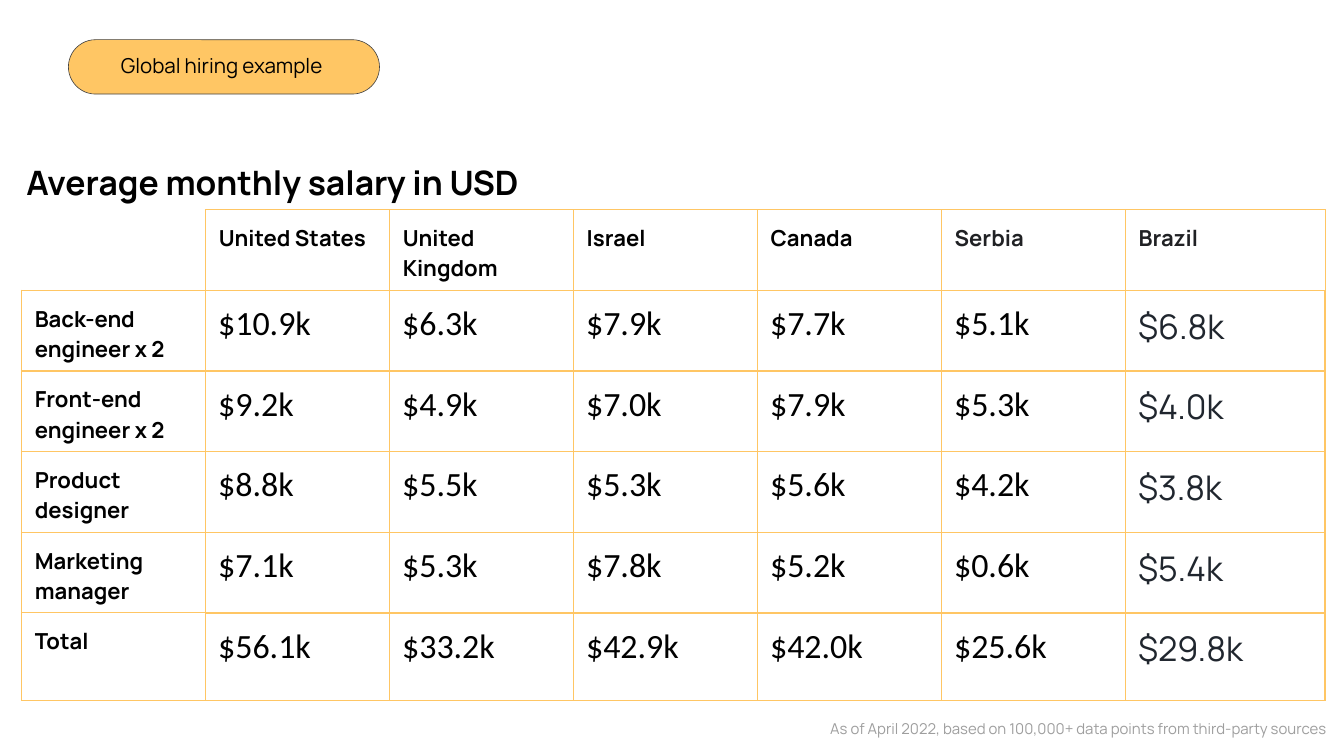
from lxml.etree import SubElement
from pptx import Presentation
from pptx.dml.color import RGBColor
from pptx.enum.shapes import MSO_SHAPE
from pptx.enum.text import MSO_AUTO_SIZE, PP_ALIGN
from pptx.oxml.ns import qn
from pptx.util import Inches, Pt

AMBER, BLACK, GREY = "FFC664", "000000", "9E9E9E"
OUTLINE, HEADER_DARK, VALUE_DARK = "434343", "202124", "20262E"
THIN, THICK = 1.5, 2

COUNTRIES = ["United States", "United Kingdom", "Israel", "Canada", "Serbia", "Brazil"]
SALARIES = {
    "Back-end\nengineer x 2": [10.9, 6.3, 7.9, 7.7, 5.1, 6.8],
    "Front-end engineer x 2": [9.2, 4.9, 7.0, 7.9, 5.3, 4.0],
    "Product\ndesigner": [8.8, 5.5, 5.3, 5.6, 4.2, 3.8],
    "Marketing\nmanager": [7.1, 5.3, 7.8, 5.2, 0.6, 5.4],
    "Total": [56.1, 33.2, 42.9, 42.0, 25.6, 29.8],
}


def colour(code):
    return RGBColor.from_string(code)


class SlideBuilder:
    """Places elements by percentages of the slide's width and height."""

    font = "Manrope"

    def __init__(self, deck):
        self.deck = deck
        self.slide = deck.slides.add_slide(deck.slide_layouts[6])

    def across(self, percent):
        return round(self.deck.slide_width * percent / 100)

    def down(self, percent):
        return round(self.deck.slide_height * percent / 100)

    def area(self, left, top, width, height):
        return self.across(left), self.down(top), self.across(width), self.down(height)

    def set_text(self, frame, text, size, ink=BLACK, bold=False, font=None, align=None):
        frame.text = text
        frame.word_wrap = True
        for para in frame.paragraphs:
            para.alignment = align
            for span in para.runs:
                span.font.name = font or self.font
                span.font.size = Pt(size)
                span.font.bold = bold
                span.font.color.rgb = colour(ink)

    def inset(self, holder, inches):
        holder.margin_left = holder.margin_right = Inches(inches)
        holder.margin_top = holder.margin_bottom = Inches(inches)

    def pill(self, *place):
        shape = self.slide.shapes.add_shape(MSO_SHAPE.ROUNDED_RECTANGLE, *self.area(*place))
        shape.adjustments[0] = 0.5
        shape.shadow.inherit = False
        shape.fill.solid()
        shape.fill.fore_color.rgb = colour(AMBER)
        shape.line.color.rgb = colour(OUTLINE)
        shape.line.width = Pt(0.75)

    def text(self, place, text, size, margin=0.22, **style):
        box = self.slide.shapes.add_textbox(*self.area(*place))
        self.inset(box.text_frame, margin)
        self.set_text(box.text_frame, text, size, **style)
        box.text_frame.auto_size = MSO_AUTO_SIZE.SHAPE_TO_FIT_TEXT

    def table(self, left, top, widths, heights):
        place = self.area(left, top, sum(widths), sum(heights))
        table = self.slide.shapes.add_table(len(heights), len(widths), *place).table
        table.first_row = table.horz_banding = False
        for column, width in zip(table.columns, widths):
            column.width = self.across(width)
        for row, height in zip(table.rows, heights):
            row.height = self.down(height)
        return table

    def borders(self, cell, left, right, top, bottom):
        """Sets border widths in points; zero hides a side."""
        properties = cell._tc.get_or_add_tcPr()
        for side, width in zip("LRTB", (left, right, top, bottom)):
            line = SubElement(properties, qn(f"a:ln{side}"), w=str(Pt(width)))
            if width:
                fill = SubElement(line, qn("a:solidFill"))
                SubElement(fill, qn("a:srgbClr"), val=AMBER)
            else:
                SubElement(line, qn("a:noFill"))

    def cell(self, cell, text, size, edges, margin=0.22, **style):
        self.inset(cell, margin)
        self.borders(cell, *edges)
        cell.fill.background()
        if text:
            self.set_text(cell.text_frame, text, size, **style)


def main():
    deck = Presentation()
    deck.slide_width, deck.slide_height = Inches(21.99), Inches(12.37)
    page = SlideBuilder(deck)

    # Label
    page.pill(5.09, 5.25, 23.15, 7.19)
    page.text((6.78, 5.42, 19.74, 6.87), "Global hiring example ", 24.2, align=PP_ALIGN.CENTER)

    # Salary table: header row, then one row per role
    table = page.table(1.59, 27.73, [13.69] * 6 + [14.87], [10.67] * 5 + [11.56])
    page.cell(table.cell(0, 0), "", 26, (0, THIN, 0, THIN))
    for column, country in enumerate(COUNTRIES, 1):
        ink = HEADER_DARK if country in ("Serbia", "Brazil") else BLACK
        page.cell(table.cell(0, column), country, 26, (THIN, THIN, THIN, THICK), ink=ink, bold=True)
    for row, (role, salaries) in enumerate(SALARIES.items(), 1):
        page.cell(table.cell(row, 0), role, 26, (THIN, THICK, THIN, THIN), bold=True)
        for column, (country, salary) in enumerate(zip(COUNTRIES, salaries), 1):
            brazil = country == "Brazil"
            page.cell(table.cell(row, column), f"${salary:.1f}k", 40, (THICK,) * 4, margin=0.21,
                      ink=VALUE_DARK if brazil else BLACK,
                      font="Manrope" if brazil else "Calibri")

    # Title and source note
    page.text((1.59, 20.78, 83.72, 6.71), "Average monthly salary in USD", 39.6,
              margin=0.08, bold=True)
    page.text((36.74, 94.02, 63.21, 5.98),
              "As of April 2022, based on 100,000+ data points from third-party sources ",
              17.6, ink=GREY, align=PP_ALIGN.RIGHT)

    deck.save("out.pptx")


if __name__ == "__main__":
    main()
